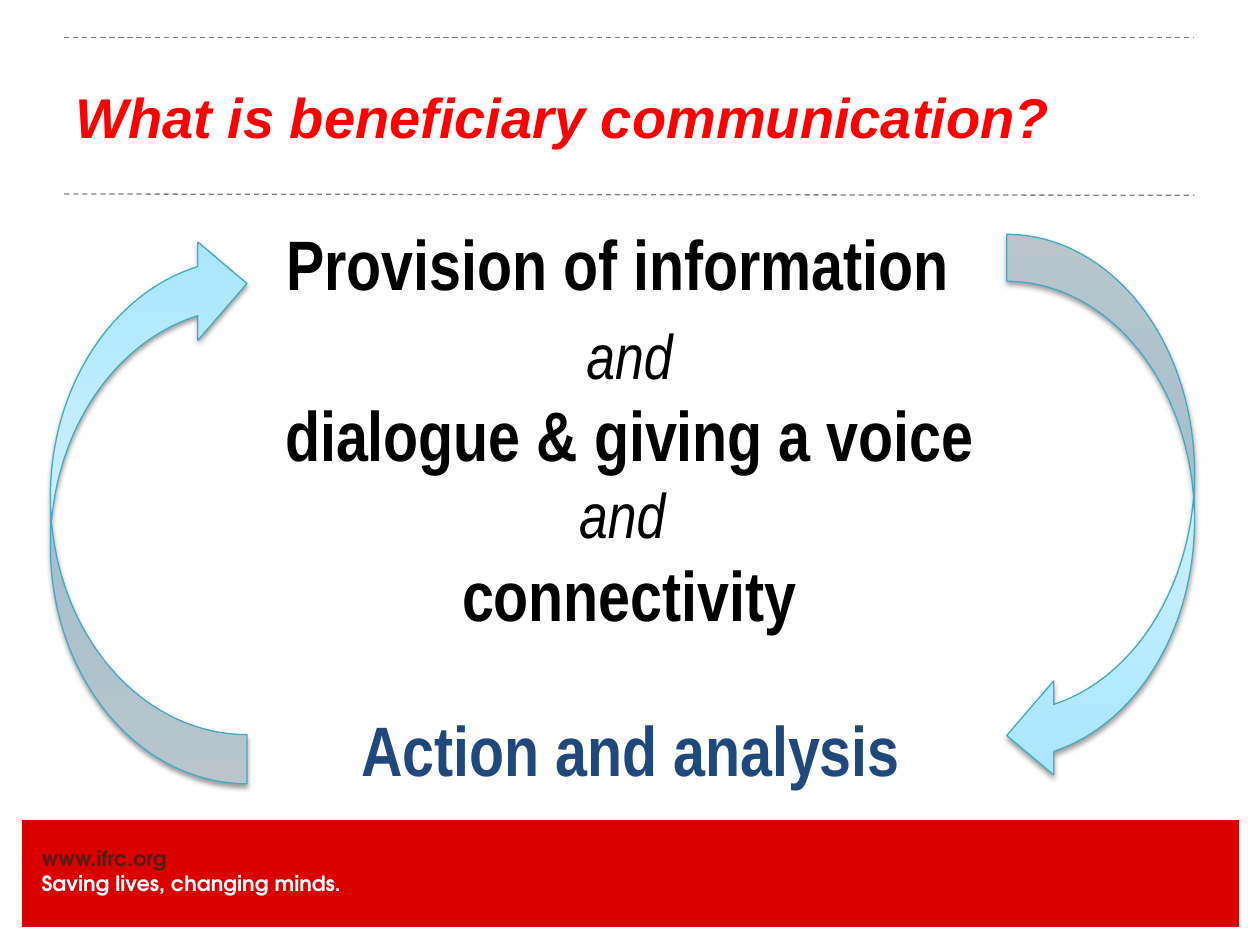
from lxml import etree
from pptx import Presentation
from pptx.dml.color import RGBColor
from pptx.enum import dml, shapes, text
from pptx.oxml import parse_xml
from pptx.oxml.ns import nsdecls, qn
from pptx.util import Inches, Pt

COLORS = {
    "footer": "DB0000", "url": "551C15", "white": "FFFFFF", "rule": "808080",
    "title": "FF0000", "black": "000000", "action": "1F497D", "outline": "46AAC5",
}
GRADIENT = [(0, "A7E6FF"), (35, "C1EDFF"), (100, "E7F8FF")]
NARROW = "Arial Narrow"
FOOTER_FONT = "TeX Gyre Adventor"


def rgb(name):
    """Return the named palette colour."""
    return RGBColor.from_string(COLORS[name])


def add_text(s, box, lines, align=text.PP_ALIGN.LEFT, anchor=text.MSO_ANCHOR.TOP, inset=None):
    """Place lines of (wording, font, size, colour, bold, italic) in a box."""
    tf = s.shapes.add_textbox(*map(Inches, box)).text_frame
    tf.word_wrap = True
    tf.vertical_anchor = anchor
    if inset is not None:
        tf.margin_left = tf.margin_right = tf.margin_top = tf.margin_bottom = Inches(inset)
    for i, (wording, font, size, color, bold, italic) in enumerate(lines):
        p = tf.paragraphs[0] if i == 0 else tf.add_paragraph()
        p.text = wording
        p.alignment = align
        f = p.runs[0].font
        f.name, f.size, f.bold, f.italic = font, Pt(size), bold, italic
        f.color.rgb = rgb(color)


def add_rule(s, x1, y1, x2, y2):
    """Draw a dashed grey rule without a shadow."""
    rule = s.shapes.add_connector(shapes.MSO_CONNECTOR.STRAIGHT, *map(Inches, (x1, y1, x2, y2)))
    rule.line.color.rgb = rgb("rule")
    rule.line.width = Pt(0.75)
    rule.line.dash_style = dml.MSO_LINE.DASH
    etree.SubElement(rule._element.spPr, qn("a:effectLst"))


def add_header(s, left, top, width, height):
    """Place the title between its two dashed rules."""
    add_rule(s, left + 0.01, top, left + width - 0.02, top)
    add_rule(s, left + 0.01, top + 1.24, left + width - 0.02, top + height)
    add_text(s, (left, top, width, height),
             [("What is beneficiary communication?", "Arial", 32, "title", True, True)],
             anchor=text.MSO_ANCHOR.MIDDLE)


def add_message(s, left, top, width):
    """Stack the centred statements and the closing line."""
    center = text.PP_ALIGN.CENTER
    add_text(s, (left, top, width, 1.05),
             [("Provision of information", NARROW, 40, "black", True, False)], center)
    add_text(s, (left + 1.72, top + 0.76, 5.75, 2.66), [
        ("and", NARROW, 36, "black", False, True),
        ("dialogue & giving a voice", NARROW, 40, "black", True, False),
        ("and ", NARROW, 36, "black", False, True),
        ("connectivity", NARROW, 40, "black", True, False),
    ], center)
    add_text(s, (left + 2.26, top + 3.86, 4.66, 1.45),
             [(" Action and analysis", NARROW, 40, "action", True, False)])


def add_cycle_arrow(s, left, top, width, height, rotation=0):
    """Draw a curved arrow with a gradient fill and a soft shadow."""
    sp = s.shapes.add_shape(shapes.MSO_SHAPE.CURVED_LEFT_ARROW,
                            *map(Inches, (left, top, width, height)))
    sp.rotation = rotation
    sp.line.color.rgb = rgb("outline")
    sp.line.width = Pt(0.75)
    stops = "".join(f'<a:gs pos="{pos * 1000}"><a:srgbClr val="{color}"/></a:gs>'
                    for pos, color in GRADIENT)
    spPr = sp._element.spPr
    spPr.find(qn("a:prstGeom")).addnext(parse_xml(
        f'<a:gradFill {nsdecls("a")} rotWithShape="1"><a:gsLst>{stops}</a:gsLst>'
        '<a:lin ang="16200000" scaled="1"/></a:gradFill>'))
    spPr.append(parse_xml(
        f'<a:effectLst {nsdecls("a")}><a:outerShdw blurRad="{Pt(3.1)}" dist="{Pt(1.6)}" '
        f'dir="5400000" rotWithShape="0"><a:srgbClr val="{COLORS["black"]}">'
        '<a:alpha val="38000"/></a:srgbClr></a:outerShdw></a:effectLst>'))


def add_footer(s, left, top, width, height):
    """Draw the red band with the address and the motto."""
    band = s.shapes.add_shape(shapes.MSO_SHAPE.RECTANGLE,
                              *map(Inches, (left, top, width, height)))
    band.shadow.inherit = False
    band.fill.solid()
    band.fill.fore_color.rgb = rgb("footer")
    band.line.color.rgb = rgb("white")
    band.line.width = Pt(0.75)
    add_text(s, (left + 0.16, top + 0.21, 3.42, 0.4), [
        ("www.ifrc.org", FOOTER_FONT, 12, "url", True, False),
        ("Saving lives, changing minds.", FOOTER_FONT, 12, "white", True, False),
    ], inset=0)


def main():
    """Build and save the slide."""
    prs = Presentation()
    prs.slide_width, prs.slide_height = Inches(10), Inches(7.5)
    s = prs.slides.add_slide(prs.slide_layouts[6])
    add_footer(s, 0.17, 6.5, 9.67, 0.86)
    add_header(s, 0.5, 0.3, 9, 1.25)
    add_message(s, 0.4, 1.7, 9)
    add_cycle_arrow(s, 7.99, 1.86, 1.49, 4.35)
    add_cycle_arrow(s, 0.4, 1.86, 1.56, 4.36, rotation=180)
    prs.save("out.pptx")


if __name__ == "__main__":
    main()
